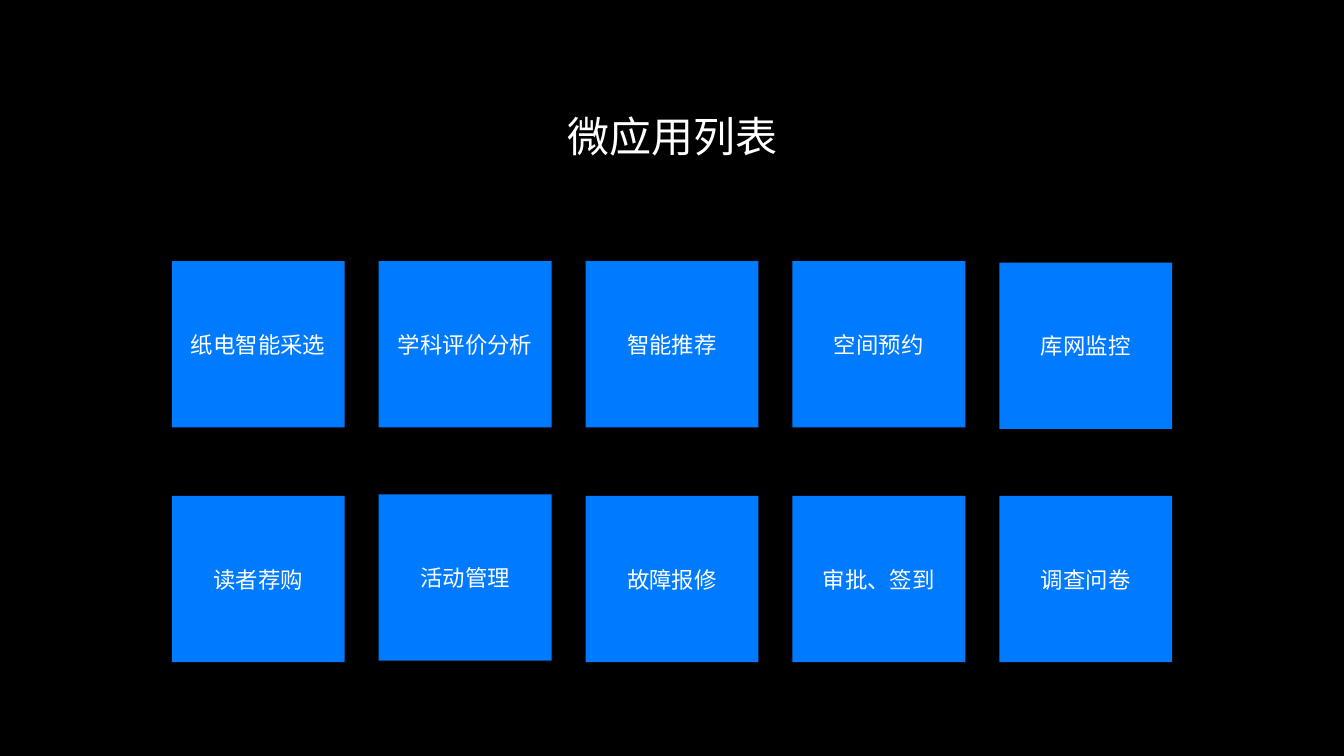
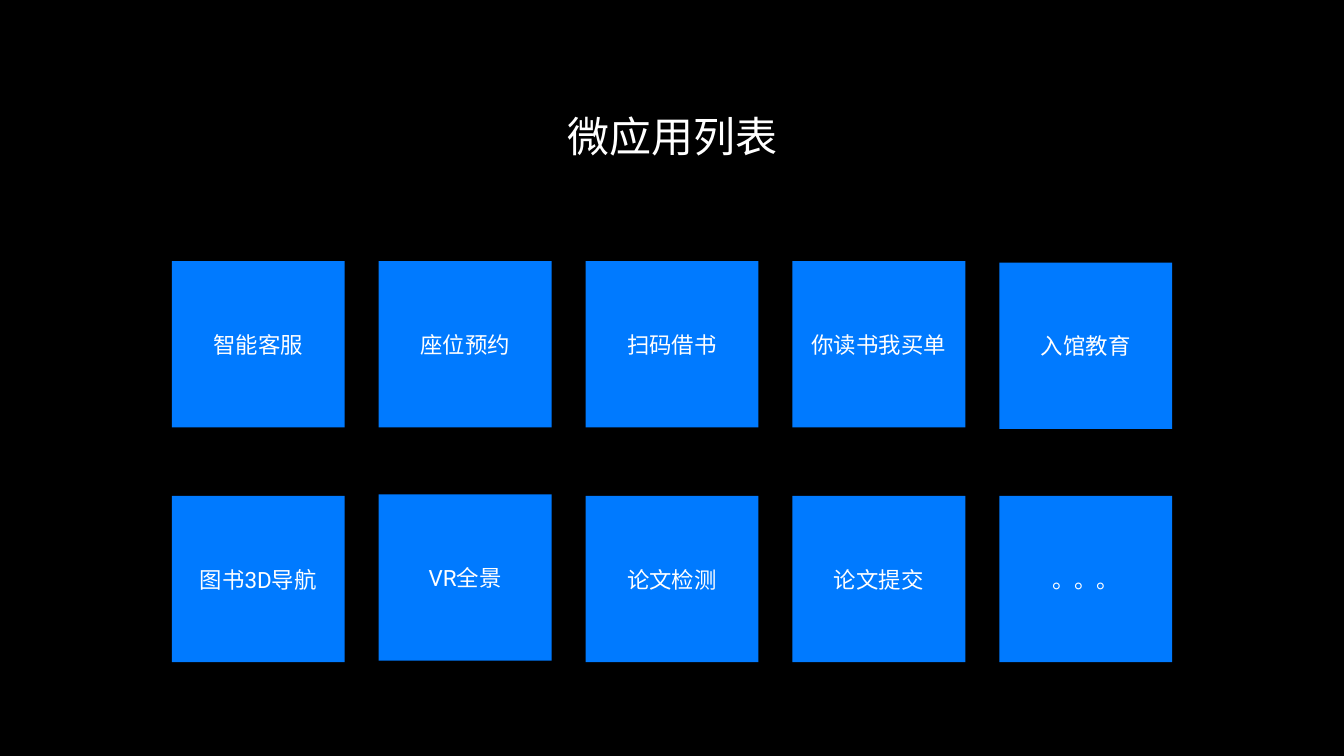
from lxml import etree
from pptx import Presentation
from pptx import util as u
from pptx.dml.color import RGBColor
from pptx.enum import shapes, text
from pptx.oxml.ns import qn

BLACK = RGBColor(0x00, 0x00, 0x00)
WHITE = RGBColor(0xFF, 0xFF, 0xFF)
BLUE = RGBColor(0x00, 0x7A, 0xFF)
FONT = "Roboto"

TITLE = "微应用列表"
APP_LISTS = [
    [
        ["纸电智能采选", "学科评价分析", "智能推荐", "空间预约", "库网监控"],
        ["读者荐购", "活动管理", "故障报修", "审批、签到", "调查问卷"],
    ],
    [
        ["智能客服", "座位预约", "扫码借书", "你读书我买单", "入馆教育"],
        ["图书3D导航", "VR全景", "论文检测", "论文提交", "。。。"],
    ],
]

FIRST_LEFT, LAST_LEFT, COLUMNS = 3.41, 19.83, 5
COLUMN_STEP = (LAST_LEFT - FIRST_LEFT) / (COLUMNS - 1)
ROW_TOPS = [5.18, 9.84]
TILE_WIDTH, TILE_HEIGHT = 3.43, 3.3
# Vertical shifts of single tiles, by (row, column)
TILE_SHIFTS = {(0, 4): 0.03, (1, 1): -0.03}


def write(shape, words, size, inset, line_spacing=None):
    """Put one centred line of white text in a shape."""
    frame = shape.text_frame
    frame.word_wrap = True
    frame.vertical_anchor = text.MSO_ANCHOR.MIDDLE
    frame.margin_left = frame.margin_right = u.Inches(inset)
    frame.margin_top = frame.margin_bottom = u.Inches(inset)
    para = frame.paragraphs[0]
    para.alignment = text.PP_ALIGN.CENTER
    if line_spacing:
        para.line_spacing = line_spacing
    span = para.add_run()
    span.text = words
    span.font.size = u.Pt(size)
    span.font.color.rgb = WHITE
    span.font.name = FONT
    # Chinese characters take their font from a:ea
    etree.SubElement(span._r.get_or_add_rPr(), qn("a:ea"), typeface=FONT)


class AppDeck:
    """Holds the deck and the page being filled."""

    def __init__(self):
        self.deck = Presentation()
        self.deck.slide_width = u.Inches(26.67)
        self.deck.slide_height = u.Inches(15)
        self.page = None

    def add_page(self):
        self.page = self.deck.slides.add_slide(self.deck.slide_layouts[6])
        background = self.page.background.fill
        background.solid()
        background.fore_color.rgb = BLACK

    def add_title(self, words):
        box = self.page.shapes.add_textbox(
            u.Inches(6.21), u.Inches(1.92), u.Inches(14.25), u.Inches(1.23))
        write(box, words, size=60, inset=0.03, line_spacing=1.3)
        box.text_frame.auto_size = text.MSO_AUTO_SIZE.SHAPE_TO_FIT_TEXT

    def add_tile(self, words, left, top):
        tile = self.page.shapes.add_shape(
            shapes.MSO_SHAPE.ROUNDED_RECTANGLE, u.Inches(left), u.Inches(top),
            u.Inches(TILE_WIDTH), u.Inches(TILE_HEIGHT))
        tile.adjustments[0] = 0
        tile.shadow.inherit = False
        tile.fill.solid()
        tile.fill.fore_color.rgb = BLUE
        tile.line.fill.background()
        write(tile, words, size=32, inset=0.06)

    def add_tile_grid(self, rows):
        for row, names in enumerate(rows):
            for column, name in enumerate(names):
                left = FIRST_LEFT + column * COLUMN_STEP
                top = ROW_TOPS[row] + TILE_SHIFTS.get((row, column), 0)
                self.add_tile(name, left, top)


def main():
    app_deck = AppDeck()
    for rows in APP_LISTS:
        app_deck.add_page()
        app_deck.add_tile_grid(rows)
        app_deck.add_title(TITLE)
    app_deck.deck.save("out.pptx")


if __name__ == "__main__":
    main()
